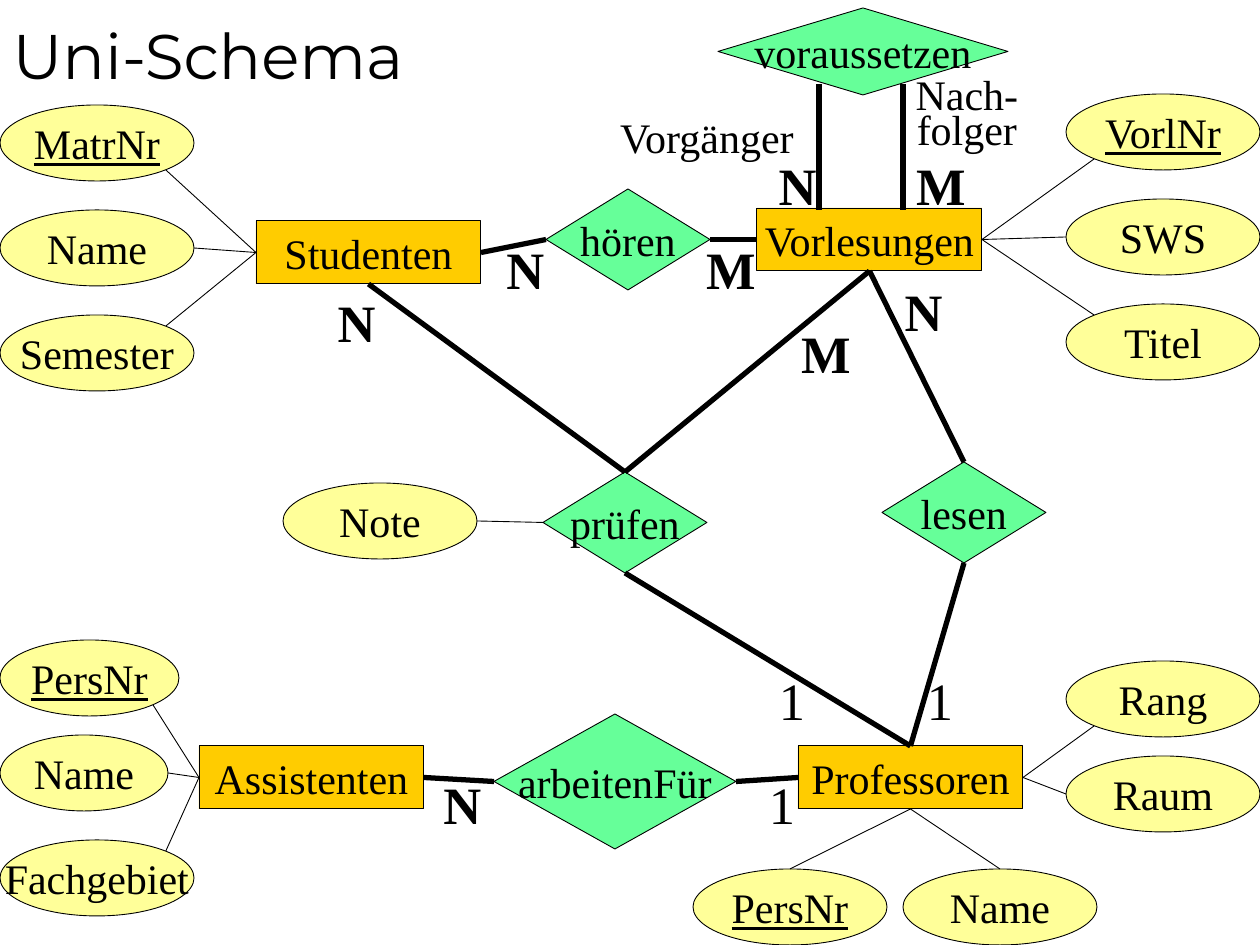
from lxml.etree import SubElement
from pptx import Presentation
from pptx.dml.color import RGBColor
from pptx.enum.shapes import MSO_CONNECTOR, MSO_SHAPE
from pptx.enum.text import MSO_ANCHOR, MSO_AUTO_SIZE, PP_ALIGN
from pptx.oxml.ns import qn
from pptx.util import Pt

PX = 914400 / 126
BLACK = RGBColor(0x00, 0x00, 0x00)
ORANGE = RGBColor(0xFF, 0xCC, 0x00)
GREEN = RGBColor(0x66, 0xFF, 0x99)
YELLOW = RGBColor(0xFF, 0xFF, 0x99)
THIN, THICK = Pt(0.5), Pt(3)
TOP, LEFT, BOTTOM, RIGHT = range(4)
ATTRIBUTE_HEIGHT = 76
DIAGONAL = 0.71


def emu(*lengths):
    return [round(length * PX) for length in lengths]


def write(shape, text, size=24, font="Times New Roman", bold=False, underline=False,
          align=PP_ALIGN.CENTER, anchor=MSO_ANCHOR.MIDDLE, wrap=False,
          spacing=None, fit=MSO_AUTO_SIZE.NONE):
    frame = shape.text_frame
    frame.text = text
    frame.word_wrap = wrap
    frame.auto_size = fit
    frame.vertical_anchor = anchor
    for paragraph in frame.paragraphs:
        paragraph.alignment = align
        paragraph.line_spacing = spacing
        for run in paragraph.runs:
            run.font.size = Pt(size)
            run.font.name = font
            run.font.bold = bold
            run.font.underline = underline
            run.font.color.rgb = BLACK


prs = Presentation()
prs.slide_width, prs.slide_height = emu(1260, 945)
slide = prs.slides.add_slide(prs.slide_layouts[5])
shapes = slide.shapes

title = shapes.title
title.left, title.top, title.width, title.height = emu(0, 42, 725, 53)
write(title, "Uni-Schema", size=36, font="Montserrat", align=PP_ALIGN.LEFT,
      anchor=MSO_ANCHOR.BOTTOM, wrap=True)
title.text_frame.margin_bottom = emu(3)[0]

entities = [
    ("Studenten", 256, 221, 225, 63),
    ("Assistenten", 199, 746, 225, 63),
    ("Professoren", 798, 746, 225, 63),
    ("Vorlesungen", 757, 208, 225, 63),
]
relationships = [
    ("hören", 546, 189, 164, 101),
    ("prüfen", 543, 472, 164, 101),
    ("arbeitenFür", 494, 714, 242, 135),
    ("lesen", 882, 462, 164, 101),
    ("voraussetzen", 718, 8, 290, 87),
]
# Owner, its side, label, left, top, width, key attribute, direction of the line's end
attributes = [
    ("Studenten", LEFT, "MatrNr", 0, 105, 194, True, (1, 1)),
    ("Studenten", LEFT, "Name", 0, 210, 194, False, (1, 0)),
    ("Studenten", LEFT, "Semester", 0, 315, 194, False, (1, -1)),
    ("Assistenten", LEFT, "PersNr", 0, 640, 179, True, (1, 1)),
    ("Assistenten", LEFT, "Name", 0, 735, 168, False, (1, 0)),
    ("Assistenten", LEFT, "Fachgebiet", 0, 840, 194, False, (1, -1)),
    ("Vorlesungen", RIGHT, "VorlNr", 1066, 94, 194, True, (-1, 1)),
    ("Vorlesungen", RIGHT, "SWS", 1066, 199, 194, False, (-1, 0)),
    ("Vorlesungen", RIGHT, "Titel", 1066, 304, 194, False, (-1, -1)),
    ("Professoren", RIGHT, "Rang", 1066, 661, 194, False, (-1, 1)),
    ("Professoren", RIGHT, "Raum", 1066, 756, 194, False, (-1, 0)),
    ("Professoren", BOTTOM, "PersNr", 693, 869, 194, True, (0, -1)),
    ("Professoren", BOTTOM, "Name", 903, 869, 194, False, (0, -1)),
    ("prüfen", LEFT, "Note", 283, 483, 194, False, (1, 0)),
]

nodes = {}
outlines = (
    [(MSO_SHAPE.RECTANGLE, ORANGE, False, *entity) for entity in entities]
    + [(MSO_SHAPE.DIAMOND, GREEN, False, *relationship) for relationship in relationships]
    + [(MSO_SHAPE.OVAL, YELLOW, key, label, left, top, width, ATTRIBUTE_HEIGHT)
       for _, _, label, left, top, width, key, _ in attributes]
)
for preset, fill, key, label, *box in outlines:
    node = shapes.add_shape(preset, *emu(*box))
    node.shadow.inherit = False
    node.fill.solid()
    node.fill.fore_color.rgb = fill
    node.line.color.rgb = BLACK
    node.line.width = THIN
    write(node, label, underline=key)
    nodes[label] = node

# Each line: start point, end point, width, glued start, glued end
lines = [((x, 84), (x, 210), THICK, None, None) for x in (819, 903)]
for owner, side, _, left, top, width, _, (dx, dy) in attributes:
    reach = DIAGONAL if dx and dy else 1
    end = (left + width / 2 * (1 + dx * reach),
           top + ATTRIBUTE_HEIGHT / 2 * (1 + dy * reach))
    lines.append(((0, 0), end, THIN, (owner, side), None))
for start, end in [
    (("Studenten", RIGHT), ("hören", LEFT)),
    (("hören", RIGHT), ("Vorlesungen", LEFT)),
    (("Studenten", BOTTOM), ("prüfen", TOP)),
    (("Vorlesungen", BOTTOM), ("prüfen", TOP)),
    (("Vorlesungen", BOTTOM), ("lesen", TOP)),
    (("prüfen", BOTTOM), ("Professoren", TOP)),
    (("lesen", BOTTOM), ("Professoren", TOP)),
    (("Assistenten", RIGHT), ("arbeitenFür", LEFT)),
    (("arbeitenFür", RIGHT), ("Professoren", LEFT)),
]:
    lines.append(((0, 0), (0, 0), THICK, start, end))

for start, end, width, glued_start, glued_end in lines:
    line = shapes.add_connector(MSO_CONNECTOR.STRAIGHT, *emu(*start, *end))
    if glued_start:
        owner, side = glued_start
        line.begin_connect(nodes[owner], side)
    if glued_end:
        owner, side = glued_end
        line.end_connect(nodes[owner], side)
    line.line.color.rgb = BLACK
    line.line.width = width
    SubElement(line._element.spPr, qn("a:effectLst"))

for role, box, spacing in [
    ("Nach-\nfolger", (872, 76, 190, 83), 0.7),
    ("Vorgänger", (588, 105, 238, 63), None),
]:
    write(shapes.add_textbox(*emu(*box)), role, anchor=MSO_ANCHOR.TOP, wrap=True,
          spacing=spacing, fit=MSO_AUTO_SIZE.SHAPE_TO_FIT_TEXT)

cardinality_widths = {"1": 52, "N": 63, "M": 76}
for cardinality, left, top in [
    ("1", 914, 662), ("1", 766, 662), ("1", 756, 766),
    ("N", 766, 147), ("N", 325, 284), ("N", 892, 273), ("N", 431, 766), ("N", 494, 231),
    ("M", 788, 315), ("M", 903, 147), ("M", 693, 231),
]:
    mark = shapes.add_textbox(*emu(left, top, cardinality_widths[cardinality], 76))
    write(mark, cardinality, size=30, bold=cardinality != "1", anchor=MSO_ANCHOR.TOP,
          fit=MSO_AUTO_SIZE.SHAPE_TO_FIT_TEXT)

prs.save("out.pptx")
